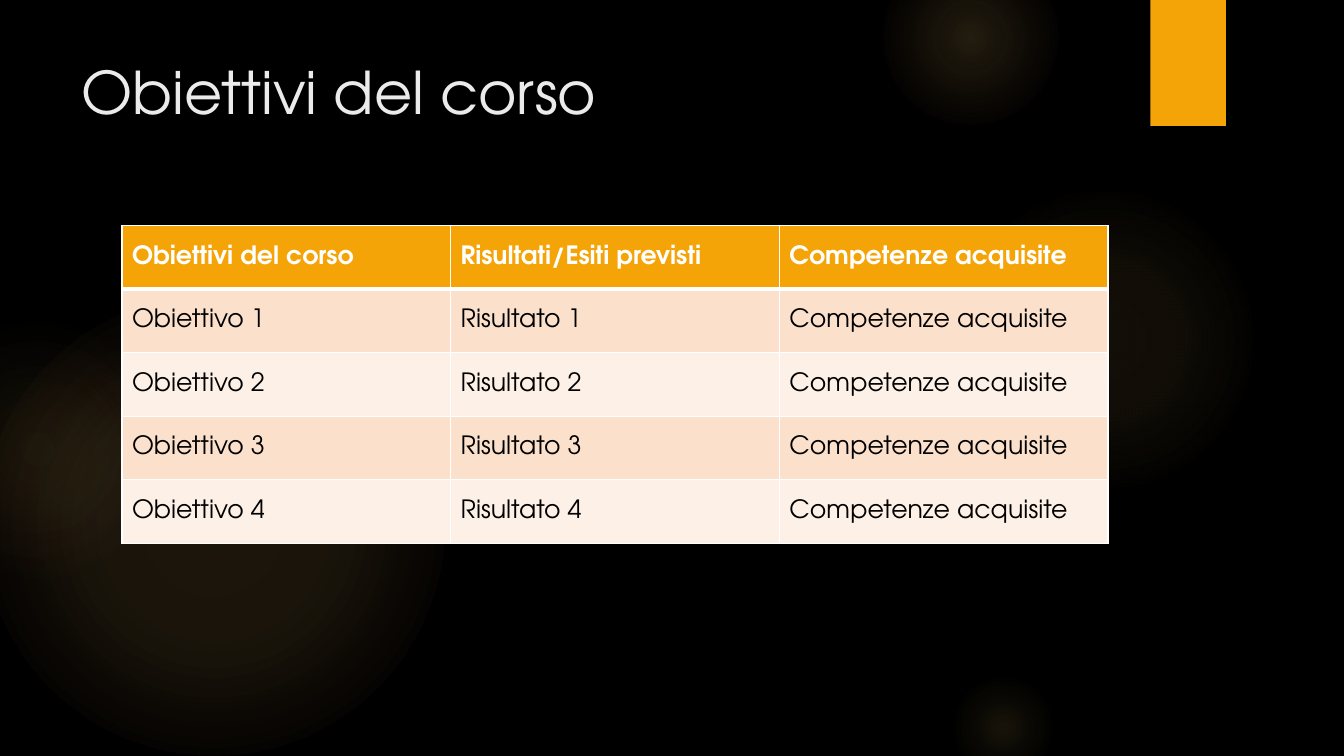
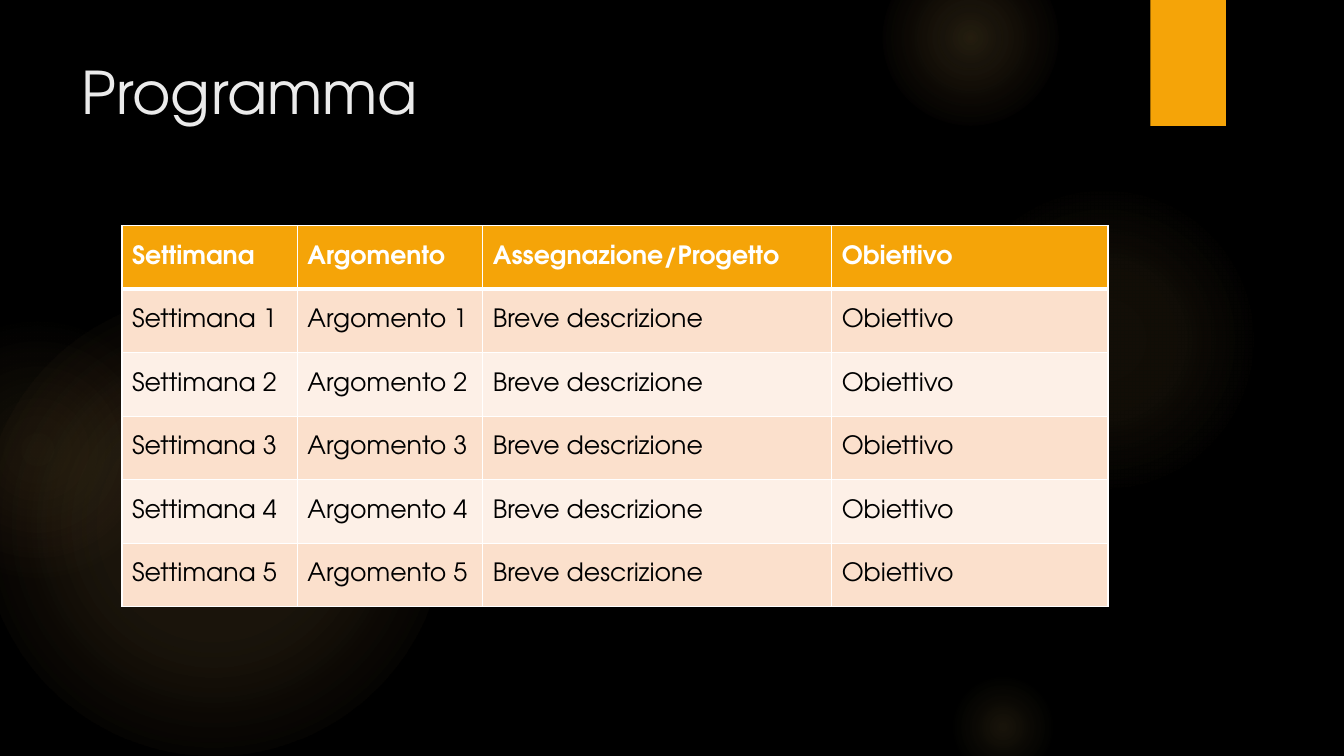
"""Builds two dark course slides, each with a title and a banded table."""
from pptx import Presentation
from pptx.dml.color import RGBColor
from pptx.enum.shapes import MSO_SHAPE
from pptx.enum.text import MSO_ANCHOR, MSO_AUTO_SIZE, PP_ALIGN
from pptx.oxml import parse_xml
from pptx.oxml.ns import nsdecls
from pptx.util import Inches, Pt

FONT = "TeX Gyre Adventor"
BLACK, WHITE, PALE = "000000", "FFFFFF", "EBEBEB"
AMBER, GLOW, CORAL = "F5A408", "FAC96A", "F59B74"
BANDS = ["FBE0CC", "FDF0E7"]

TITLE = (0.71, 0.5, 10.29, 1.53)
TAB = (11.41, 0, 0.75, 1.25)
LEFT, TOP, ROW = 1.21, 2.24, 0.63

GLOWS = [
    (-0.17, 2.92, 4.58, [(0, GLOW, 11), (36, GLOW, 10), (75, GLOW, 0)]),
    (-0.92, 3.17, 2.58, [(0, GLOW, 8), (36, GLOW, 5), (71, CORAL, 0)]),
    (9.41, 1.83, 3.08, [(0, GLOW, 7), (36, GLOW, 6), (69, GLOW, 0)]),
    (8.75, -0.5, 1.75, [(0, GLOW, 14), (36, GLOW, 7), (73, GLOW, 0)]),
    (9.41, 6.67, 1.08, [(0, GLOW, 10), (31, GLOW, 5), (66, GLOW, 0)]),
]

SLIDES = [
    {
        "title": "Obiettivi del corso",
        "cols": [3.26, 3.26, 3.26],
        "head": ["Obiettivi del corso", "Risultati/Esiti previsti",
                 "Competenze acquisite"],
        "rows": [[f"Obiettivo {n}", f"Risultato {n}", "Competenze acquisite"]
                 for n in range(1, 5)],
    },
    {
        "title": "Programma",
        "cols": [1.74, 1.84, 3.46, 2.74],
        "head": ["Settimana", "Argomento", "Assegnazione/Progetto",
                 "Obiettivo"],
        "rows": [[f"Settimana {n}", f"Argomento {n}", "Breve descrizione",
                  "Obiettivo"] for n in range(1, 6)],
    },
]


def paint(fill, color):
    """Give a fill one solid colour."""
    fill.solid()
    fill.fore_color.rgb = RGBColor.from_string(color)


def style(para, size, color, bold=False):
    """Set the font of a whole paragraph."""
    font = para.font
    font.name, font.size, font.bold = FONT, Pt(size), bold
    font.color.rgb = RGBColor.from_string(color)


def add_form(slide, kind, box):
    """Add a preset shape without line or shadow."""
    form = slide.shapes.add_shape(kind, *map(Inches, box))
    form.line.fill.background()
    form.shadow.inherit = False
    return form


def add_glow(slide, left, top, size, stops):
    """Add a circle that fades out from its centre."""
    glow = add_form(slide, MSO_SHAPE.OVAL, (left, top, size, size))
    marks = "".join(
        f'<a:gs pos="{pos * 1000}"><a:srgbClr val="{color}">'
        f'<a:alpha val="{alpha * 1000}"/></a:srgbClr></a:gs>'
        for pos, color, alpha in stops)
    glow.element.spPr.insert(2, parse_xml(
        f'<a:gradFill {nsdecls("a")} rotWithShape="1">'
        f'<a:gsLst>{marks}</a:gsLst><a:path path="circle">'
        '<a:fillToRect l="50000" t="50000" r="50000" b="50000"/>'
        '</a:path></a:gradFill>'))
    return glow


def dress(layout, slide):
    """Put background, glows, tab and title place on the shared layout."""
    paint(layout.background.fill, BLACK)
    forms = [add_glow(slide, *glow) for glow in GLOWS]
    tab = add_form(slide, MSO_SHAPE.RECTANGLE, TAB)
    paint(tab.fill, AMBER)
    for spot, form in enumerate(forms + [tab], 2):
        layout.shapes.element.insert(spot, form.element)
    title = layout.placeholders[0]
    title.left, title.top, title.width, title.height = map(Inches, TITLE)


def add_title(slide, text):
    """Fill the title placeholder."""
    frame = slide.shapes.title.text_frame
    frame.text = text
    frame.word_wrap = True
    frame.auto_size = MSO_AUTO_SIZE.NONE
    frame.vertical_anchor = MSO_ANCHOR.TOP
    para = frame.paragraphs[0]
    para.alignment = PP_ALIGN.LEFT
    style(para, 42, PALE)


def edge(cell, row):
    """Draw white cell borders, thick under the header row."""
    widths = {"L": 1, "R": 1, "T": 3 if row == 1 else 1,
              "B": 3 if row == 0 else 1}
    props = cell._tc.get_or_add_tcPr()
    for spot, (side, width) in enumerate(widths.items()):
        props.insert(spot, parse_xml(
            f'<a:ln{side} {nsdecls("a")} w="{Pt(width)}"><a:solidFill>'
            f'<a:srgbClr val="{WHITE}"/></a:solidFill></a:ln{side}>'))


def add_grid(slide, cols, head, rows):
    """Add the table with a header and banded rows."""
    lines = [head] + rows
    grid = slide.shapes.add_table(
        len(lines), len(cols), Inches(LEFT), Inches(TOP),
        Inches(sum(cols)), Inches(ROW * len(lines))).table
    for col, width in zip(grid.columns, cols):
        col.width = Inches(width)
    for row, line in enumerate(lines):
        top = row == 0
        for col, text in enumerate(line):
            cell = grid.cell(row, col)
            cell.text = text
            cell.vertical_anchor = MSO_ANCHOR.MIDDLE
            paint(cell.fill, AMBER if top else BANDS[(row - 1) % 2])
            style(cell.text_frame.paragraphs[0], 18,
                  WHITE if top else BLACK, top)
            edge(cell, row)


def main():
    """Build and save the deck."""
    deck = Presentation()
    deck.slide_width, deck.slide_height = Inches(13.33), Inches(7.5)
    layout = deck.slide_layouts[5]
    pages = [deck.slides.add_slide(layout) for _ in SLIDES]
    dress(layout, pages[0])
    for page, data in zip(pages, SLIDES):
        add_title(page, data["title"])
        add_grid(page, data["cols"], data["head"], data["rows"])
    deck.save("out.pptx")


if __name__ == "__main__":
    main()
